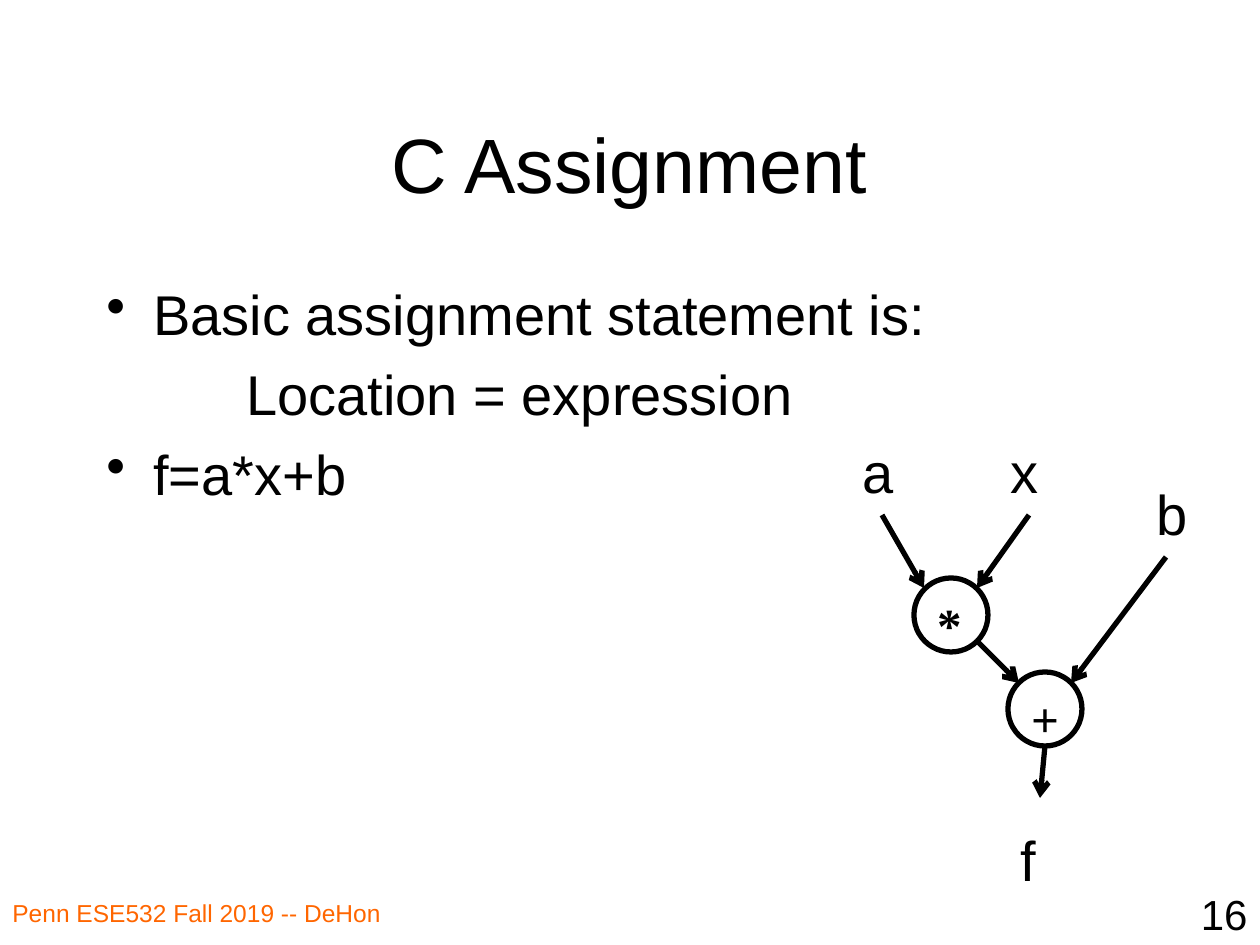
from dataclasses import dataclass

from lxml import etree
from pptx import Presentation, util as u
from pptx.dml.color import RGBColor
from pptx.enum import shapes, text
from pptx.oxml.ns import qn

SCALE = 914400 / 126


def px(length):
    return u.Emu(round(length * SCALE))


@dataclass(frozen=True)
class Theme:
    ink: str = "000000"
    accent: str = "FF6600"
    sans: str = "Arial"
    serif: str = "Times New Roman"
    title: int = 44
    body: int = 32
    operator: int = 28
    number: int = 24
    footer: int = 14
    stroke: int = 3
    paragraph_gap: float = 7.5


class Deck:
    """Holds the theme and the current slide, and draws each kind of element."""

    def __init__(self, theme, width, height):
        self.theme = theme
        self.presentation = Presentation()
        self.presentation.slide_width = px(width)
        self.presentation.slide_height = px(height)
        self.slide = self.presentation.slides.add_slide(self.presentation.slide_layouts[6])

    def style(self, paragraph, size, color=None, name=None, bold=False):
        font = paragraph.font
        font.size = u.Pt(size)
        font.name = name or self.theme.sans
        font.bold = bold
        font.color.rgb = RGBColor.from_string(color or self.theme.ink)

    def text_box(self, box, words, size, color=None, align=text.PP_ALIGN.LEFT,
                 anchor=text.MSO_ANCHOR.TOP):
        frame = self.slide.shapes.add_textbox(*map(px, box)).text_frame
        frame.word_wrap = True
        frame.vertical_anchor = anchor
        paragraph = frame.paragraphs[0]
        paragraph.text = words
        paragraph.alignment = align
        self.style(paragraph, size, color)

    def bullet_list(self, box, items, bullet_indent, plain_indent):
        frame = self.slide.shapes.add_textbox(*map(px, box)).text_frame
        frame.word_wrap = True
        for index, (words, bulleted) in enumerate(items):
            paragraph = frame.add_paragraph() if index else frame.paragraphs[0]
            paragraph.text = words
            paragraph.space_before = u.Pt(self.theme.paragraph_gap)
            self.style(paragraph, self.theme.body)
            properties = paragraph._p.get_or_add_pPr()
            indent = bullet_indent if bulleted else plain_indent
            properties.set("marL", str(px(indent)))
            if bulleted:
                properties.set("indent", str(-px(indent)))
                bullet = etree.Element(qn("a:buChar"), char="•")
                properties.insert_element_before(bullet, "a:tabLst", "a:defRPr", "a:extLst")

    def operator(self, left, top, diameter, symbol):
        shape = self.slide.shapes.add_shape(
            shapes.MSO_SHAPE.OVAL, *map(px, (left, top, diameter, diameter)))
        shape.shadow.inherit = False
        shape.fill.background()
        shape.line.color.rgb = RGBColor.from_string(self.theme.ink)
        shape.line.width = u.Pt(self.theme.stroke)
        frame = shape.text_frame
        frame.vertical_anchor = text.MSO_ANCHOR.TOP
        paragraph = frame.paragraphs[0]
        paragraph.text = symbol
        paragraph.alignment = text.PP_ALIGN.LEFT
        self.style(paragraph, self.theme.operator, name=self.theme.serif, bold=True)

    def arrow(self, start, end):
        connector = self.slide.shapes.add_connector(
            shapes.MSO_CONNECTOR.STRAIGHT, *map(px, start + end))
        connector.line.color.rgb = RGBColor.from_string(self.theme.ink)
        connector.line.width = u.Pt(self.theme.stroke)
        etree.SubElement(connector.line._get_or_add_ln(), qn("a:tailEnd"), type="arrow")
        etree.SubElement(connector._element.spPr, qn("a:effectLst"))

    def save(self):
        self.presentation.save("out.pptx")


def main():
    theme = Theme()
    deck = Deck(theme, 1260, 945)
    deck.text_box((0, 892, 483, 53), "Penn ESE532 Fall 2019 -- DeHon", theme.footer, theme.accent)
    deck.text_box((998, 882, 262, 63), "16", theme.number, align=text.PP_ALIGN.RIGHT)
    deck.text_box((94, 84, 1071, 158), "C Assignment", theme.title,
                  align=text.PP_ALIGN.CENTER, anchor=text.MSO_ANCHOR.MIDDLE)
    deck.bullet_list((94, 273, 1071, 567), [
        ("Basic assignment statement is:", True),
        ("Location = expression", False),
        ("f=a*x+b", True),
    ], bullet_indent=47, plain_indent=140)

    for left, top, symbol in [(914, 578, "*"), (1008, 672, "+")]:
        deck.operator(left, top, 74, symbol)
    for left, top, name in [(850, 431, "a"), (998, 431, "x"), (1144, 473, "b"), (1008, 819, "f")]:
        deck.text_box((left, top, 74, 81), name, theme.body)
    for start, end in [
        ((882, 515), (924, 588)),
        ((1029, 515), (977, 588)),
        ((977, 641), (1019, 683)),
        ((1166, 557), (1071, 683)),
        ((1045, 746), (1040, 798)),
    ]:
        deck.arrow(start, end)
    deck.save()


if __name__ == "__main__":
    main()
